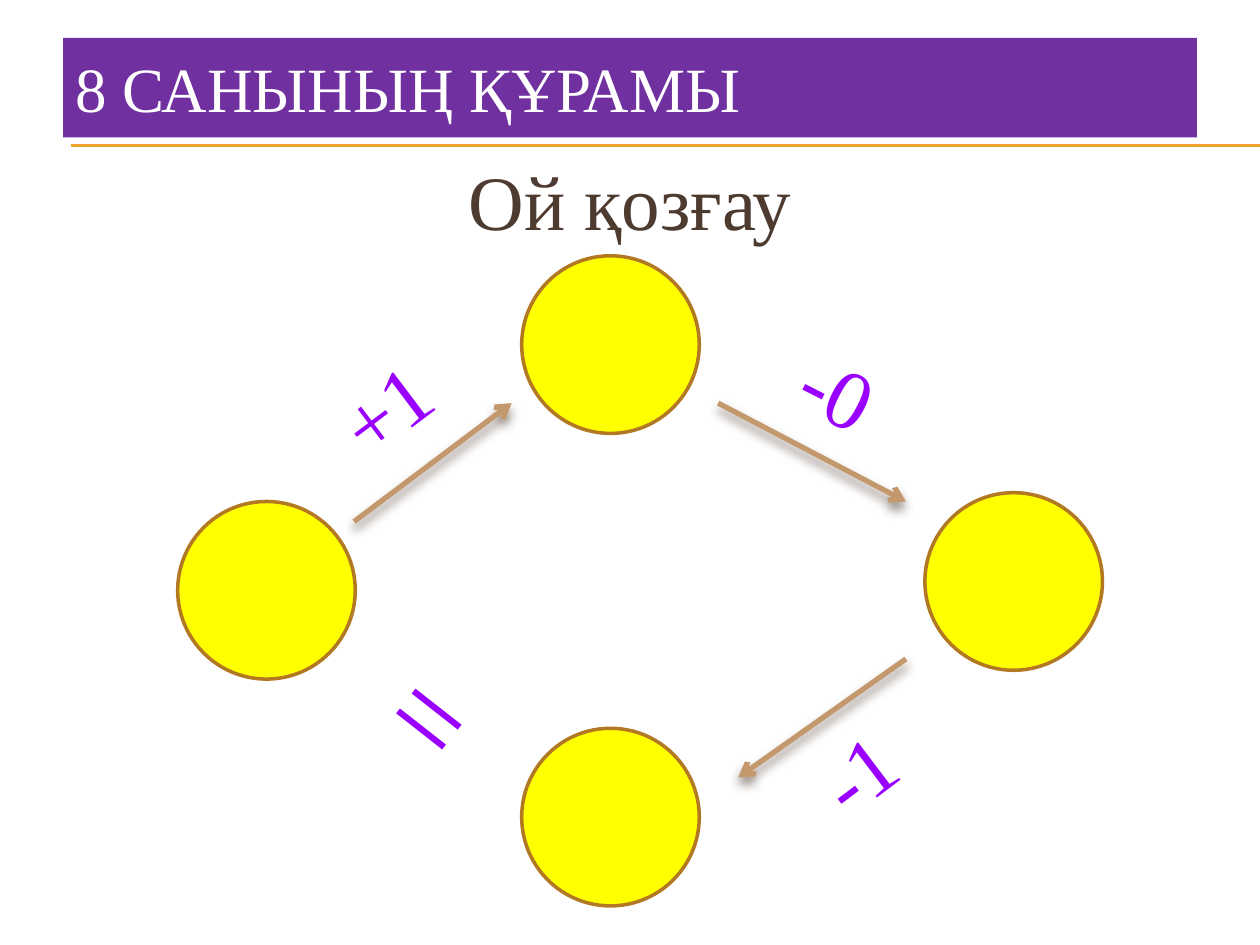
from lxml import etree
from pptx import Presentation
from pptx import util as u
from pptx.dml.color import RGBColor
from pptx.enum import shapes, text
from pptx.oxml.ns import qn

FONT = "Times New Roman"
CIRCLE = 1.41


def colour(value):
    return RGBColor.from_string(value)


def inches(*lengths):
    return [u.Inches(length) for length in lengths]


def place(shape, box):
    for name, length in zip(("left", "top", "width", "height"), inches(*box)):
        setattr(shape, name, length)


def write(frame, words, size, hue, align, bullet=True):
    frame.word_wrap = True
    para = frame.paragraphs[0]
    para.alignment = align
    if not bullet:
        etree.SubElement(para._p.get_or_add_pPr(), qn("a:buNone"))
    span = para.add_run()
    span.text = words
    for name, value in {"name": FONT, "size": u.Pt(size), "bold": False}.items():
        setattr(span.font, name, value)
    span.font.color.rgb = colour(hue)


def add_line(page, start, end, hue, width):
    """Draw a straight line without a shadow and return it with its effect list."""
    line = page.shapes.add_connector(
        shapes.MSO_CONNECTOR.STRAIGHT, *inches(*start, *end))
    line.line.color.rgb = colour(hue)
    line.line.width = u.Pt(width)
    effects = etree.SubElement(line._element.spPr, qn("a:effectLst"))
    return line, effects


def add_arrow(page, start, end):
    line, effects = add_line(page, start, end, "C3986D", 3)
    etree.SubElement(line.line._get_or_add_ln(), qn("a:tailEnd"), type="arrow")
    shadow = etree.SubElement(
        effects, qn("a:outerShdw"), blurRad=str(u.Pt(6)), dist=str(u.Pt(4)),
        dir="5400000", rotWithShape="0")
    hue = etree.SubElement(shadow, qn("a:srgbClr"), val="4E3B30")
    etree.SubElement(hue, qn("a:alpha"), val="60000")


def add_heading(page, box):
    left, top, _, height = box
    for gap in (0.06, 0.07):
        rule = top + height + gap
        add_line(page, (left + 0.06, rule), (10, rule), "F0A22E", 0.75)
    title = page.shapes.title
    place(title, box)
    title.fill.solid()
    title.fill.fore_color.rgb = colour("7030A0")
    title.text_frame.vertical_anchor = text.MSO_ANCHOR.MIDDLE
    write(title.text_frame, "8 САНЫНЫҢ ҚҰРАМЫ", 36, "FFFFFF", text.PP_ALIGN.LEFT)


def add_subtitle(page, box):
    body = page.placeholders[1]
    place(body, box)
    body.text_frame.auto_size = text.MSO_AUTO_SIZE.NONE
    write(body.text_frame, "Ой қозғау", 44, "4E3B30", text.PP_ALIGN.CENTER,
          bullet=False)


def add_circle(page, left, top):
    circle = page.shapes.add_shape(
        shapes.MSO_SHAPE.OVAL, *inches(left, top, CIRCLE, CIRCLE))
    circle.shadow.inherit = False
    circle.fill.solid()
    circle.fill.fore_color.rgb = colour("FFFF00")
    circle.line.color.rgb = colour("B27822")
    circle.line.width = u.Pt(2)


def add_sign(page, words, box, angle, size):
    sign = page.shapes.add_textbox(*inches(*box))
    sign.rotation = angle
    write(sign.text_frame, words, size, "9900FF", text.PP_ALIGN.CENTER)
    sign.text_frame.auto_size = text.MSO_AUTO_SIZE.SHAPE_TO_FIT_TEXT


def add_number_ring(page, box):
    """Place the circles, arrows and signs relative to the ring's box."""
    left, top, width, height = box
    middle = left + 2.73

    def at(x, y):
        return left + x, top + y

    for corner in ((left, top + 1.95), (middle, top + height - CIRCLE),
                   (left + width - CIRCLE, top + 1.88), (middle, top)):
        add_circle(page, *corner)
    for start, end in (((1.4, 2.11), (2.65, 1.17)),
                       ((5.78, 3.2), (4.45, 4.14)),
                       ((4.29, 1.17), (5.78, 1.95))):
        add_arrow(page, at(*start), at(*end))
    for words, x, y, tall, angle, size in (
            ("+1", 1.02, 0.75, 0.91, 322.9, 48),
            ("-1", 4.77, 3.64, 0.91, 322.9, 48),
            ("-0", 4.62, 0.61, 0.91, 26.9, 48),
            ("=", 1.41, 2.98, 1.31, 38.1, 72)):
        add_sign(page, words, (*at(x, y), 1.25, tall), angle, size)


def main():
    deck = Presentation()
    deck.slide_width, deck.slide_height = inches(10, 7.5)
    page = deck.slides.add_slide(deck.slide_layouts[1])
    add_heading(page, (0.5, 0.3, 9, 0.79))
    add_subtitle(page, (0.5, 1.17, 9, 5.53))
    add_number_ring(page, (1.41, 2.03, 7.34, 5.16))
    deck.save("out.pptx")


if __name__ == "__main__":
    main()
